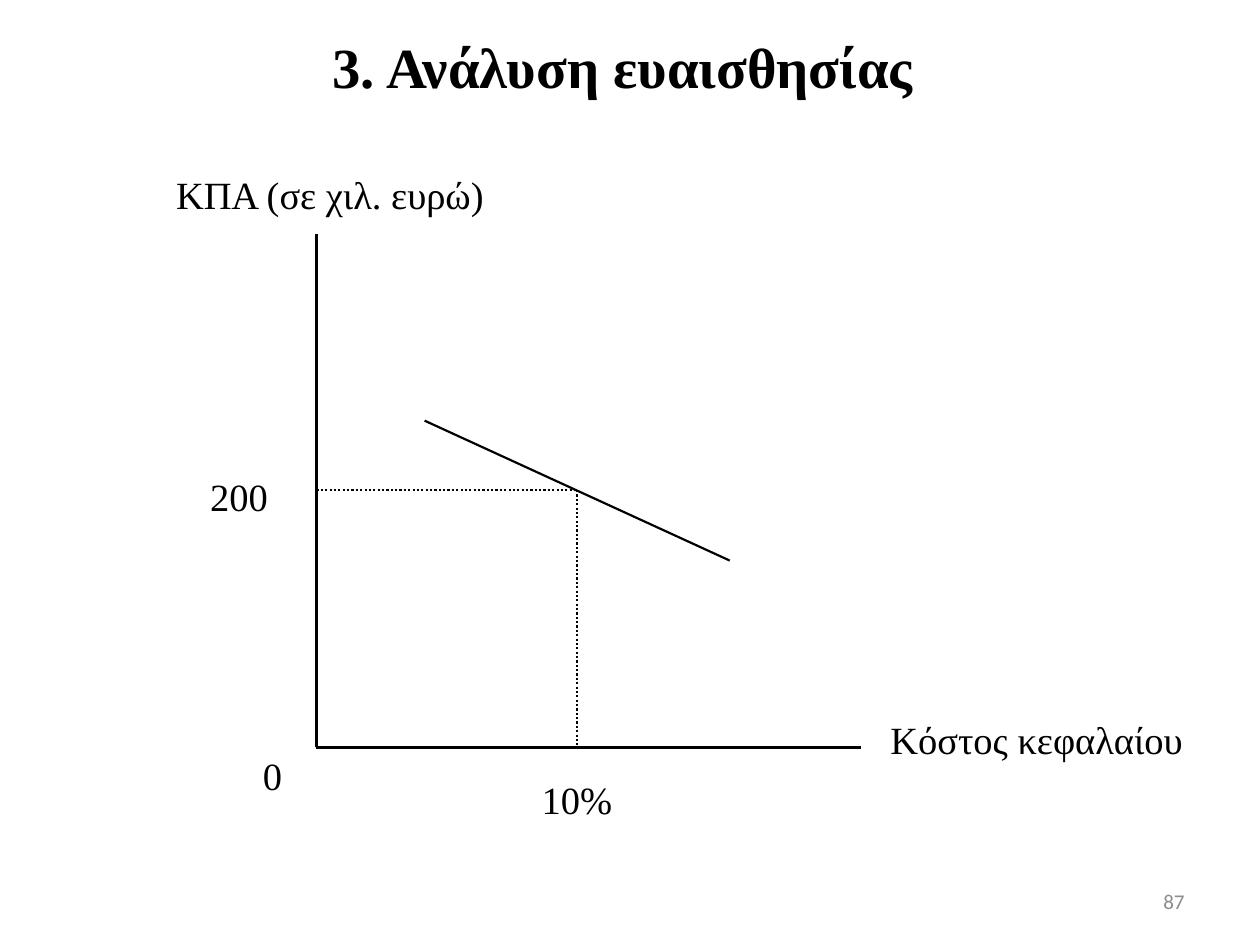
from dataclasses import dataclass

from pptx import Presentation
from pptx.dml.color import RGBColor
from pptx.enum.dml import MSO_LINE_DASH_STYLE as Dash
from pptx.enum.shapes import MSO_CONNECTOR as Connector
from pptx.enum.text import MSO_ANCHOR as Anchor, PP_ALIGN as Align
from pptx.oxml.ns import qn
from pptx.slide import Slide
from pptx.util import Cm, Pt
from lxml.etree import SubElement

BLACK = RGBColor(0x00, 0x00, 0x00)
GREY = RGBColor(0x8C, 0x8C, 0x8C)

ORIGIN_X, ORIGIN_Y = 6.38, 15.06
RATE_X, VALUE_Y = 11.63, 9.88


@dataclass(frozen=True)
class Label:
    text: str
    left: float
    top: float
    width: float
    height: float
    align: Align = Align.LEFT
    size: float = 22
    font: str = "Times New Roman"
    color: RGBColor = BLACK
    bold: bool = False
    anchor: Anchor = Anchor.TOP


@dataclass(frozen=True)
class Line:
    x1: float
    y1: float
    x2: float
    y2: float
    width: float = 1.25
    dotted: bool = False


LINES = [
    Line(ORIGIN_X, 4.72, ORIGIN_X, ORIGIN_Y),
    Line(ORIGIN_X, ORIGIN_Y, 17.35, ORIGIN_Y, width=1.75),
    Line(8.56, 8.48, 14.71, 11.3),
    Line(ORIGIN_X, VALUE_Y, RATE_X, VALUE_Y, dotted=True),
    Line(RATE_X, VALUE_Y, RATE_X, ORIGIN_Y, dotted=True),
]

LABELS = [
    Label("3. Ανάλυση ευαισθησίας ", 0, 0.51, 25.4, 1.37, Align.CENTER,
          size=32.4, bold=True),
    Label("87", 18.21, 17.65, 5.92, 1.02, Align.RIGHT, size=12,
          font="Calibri", color=GREY, anchor=Anchor.MIDDLE),
    Label("Κόστος κεφαλαίου", 17.7, 14.3, 6.58, 1.88),
    Label("ΚΠΑ (σε χιλ. ευρώ)", 3.3, 3.33, 7.29, 1.88),
    Label("0", 4.62, 15.04, 1.75, 1.4, Align.CENTER),
    Label("10%", 10.31, 15.52, 2.64, 1.4, Align.CENTER),
    Label("200", 3.73, 9.42, 2.18, 1.4, Align.CENTER),
]


def draw_line(slide: Slide, line: Line) -> None:
    stroke = slide.shapes.add_connector(
        Connector.STRAIGHT, Cm(line.x1), Cm(line.y1), Cm(line.x2), Cm(line.y2))
    stroke.line.color.rgb = BLACK
    stroke.line.width = Pt(line.width)
    if line.dotted:
        stroke.line.dash_style = Dash.ROUND_DOT
    SubElement(stroke._element.spPr, qn("a:effectLst"))


def draw_label(slide: Slide, label: Label) -> None:
    frame = slide.shapes.add_textbox(
        Cm(label.left), Cm(label.top), Cm(label.width), Cm(label.height)).text_frame
    frame.word_wrap = True
    frame.vertical_anchor = label.anchor
    frame.text = label.text
    paragraph = frame.paragraphs[0]
    paragraph.alignment = label.align
    font = paragraph.runs[0].font
    font.name = label.font
    font.size = Pt(label.size)
    font.bold = label.bold
    font.color.rgb = label.color


def main() -> None:
    deck = Presentation()
    deck.slide_width, deck.slide_height = Cm(25.4), Cm(19.05)
    slide = deck.slides.add_slide(deck.slide_layouts[6])
    for line in LINES:
        draw_line(slide, line)
    for label in LABELS:
        draw_label(slide, label)
    deck.save("out.pptx")


if __name__ == "__main__":
    main()
